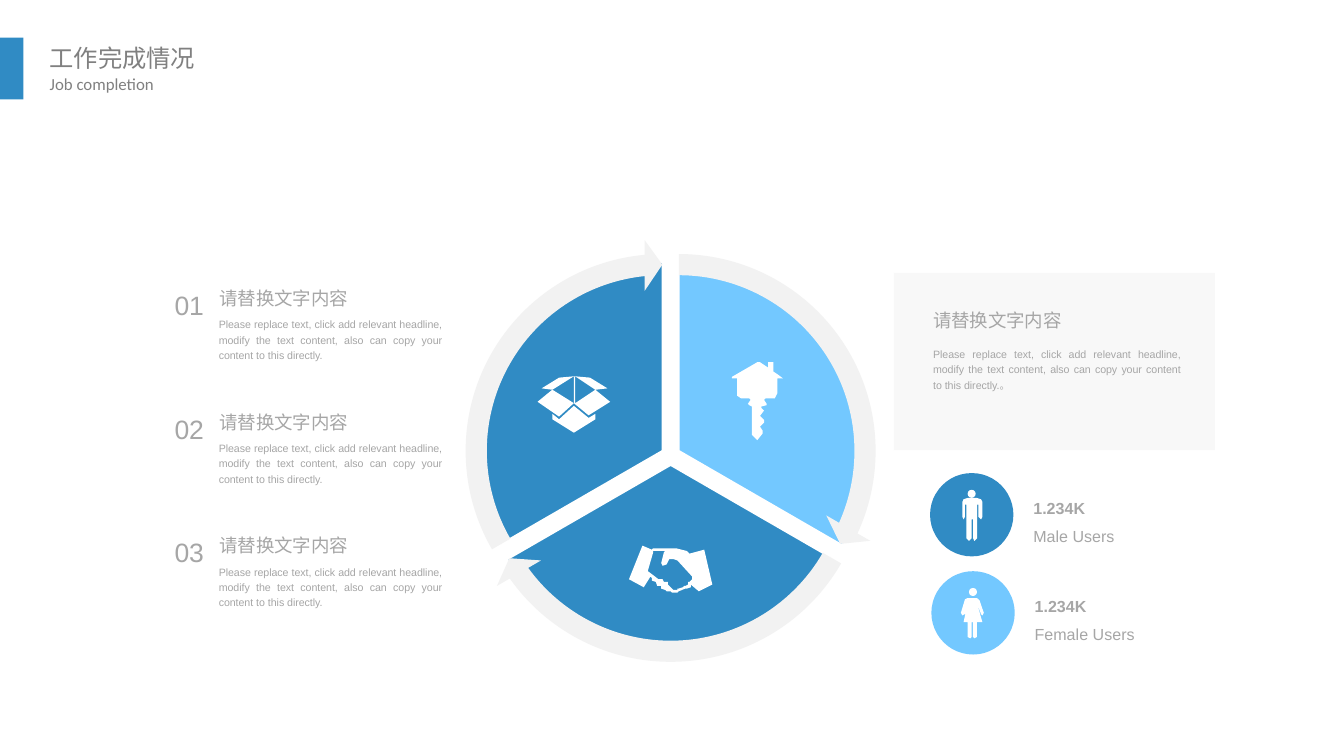
from math import cos, radians, sin
from typing import NamedTuple

from lxml.etree import SubElement
from pptx import Presentation
from pptx.dml.color import RGBColor
from pptx.enum.shapes import MSO_SHAPE
from pptx.enum.text import MSO_AUTO_SIZE, PP_ALIGN
from pptx.oxml.ns import qn
from pptx.util import Inches, Pt

BLUE = RGBColor(0x30, 0x8B, 0xC4)
SKY = RGBColor(0x73, 0xC8, 0xFF)
PALE = RGBColor(0xF2, 0xF2, 0xF2)
WHITE = RGBColor(0xFF, 0xFF, 0xFF)
DARK_GREY = RGBColor(0x80, 0x80, 0x80)
GREY = RGBColor(0xA6, 0xA6, 0xA6)

CELL = Inches(0.1)
ICON_STEP = CELL / 10
CJK_FONT = "Noto Sans CJK SC"
HEADING = "请替换文字内容"
BODY = ("Please replace text, click add relevant headline, modify the text content, "
        "also can copy your content to this directly.")

HANDSHAKE = [
    [(56, 3), (45, 6), (46, 7), (43, 4), (35, 2), (31, 2), (18, 2), (17, 3), (10, 0),
     (0, 25), (11, 31), (16, 23), (17, 24), (17, 26), (20, 27), (21, 30), (24, 30), (24, 32),
     (27, 33), (28, 34), (31, 34), (32, 35), (36, 35), (37, 34), (42, 32), (43, 32), (46, 31),
     (46, 29), (52, 34), (62, 29)],
    [(45, 27), (44, 27), (44, 29), (42, 30), (41, 30), (40, 31), (37, 32), (36, 32),
     (36, 33), (33, 33), (31, 31), (29, 29), (29, 27), (26, 27), (25, 25), (22, 25), (18, 22),
     (14, 19), (18, 5), (18, 4), (27, 4), (26, 5), (24, 13), (25, 15), (28, 14), (30, 10),
     (33, 10), (36, 11), (47, 23), (47, 25)],
]
CARTON_LID = [[(27, 20), (38, 29), (54, 19), (43, 10), (28, 20), (28, 0), (43, 10), (52, 9),
               (39, 1), (28, 0), (27, 0), (16, 1), (3, 9), (11, 10), (27, 0)]]
CARTON_FLAP = [[(0, 19), (16, 30), (27, 20), (11, 10)]]
CARTON_BASE = [[(27, 22), (16, 32), (11, 28), (11, 32), (27, 42), (43, 32), (43, 28), (38, 31)]]
HOUSE_KEY = [[(5, 23), (5, 13), (1, 13), (1, 12), (20, 1), (22, 1), (28, 5), (28, 1), (32, 1),
              (32, 8), (35, 10), (39, 13), (35, 13), (35, 24), (33, 28), (26, 28), (25, 29),
              (27, 32), (27, 33), (23, 34), (23, 35), (25, 37), (22, 41), (25, 44), (25, 46),
              (22, 49), (24, 52), (24, 54), (20, 59), (16, 55), (16, 34), (14, 33), (13, 32),
              (15, 29), (14, 28), (8, 28), (5, 26)]]
MAN = [[(11, 0), (4, 0), (1, 1), (0, 3), (0, 14), (1, 16), (2, 14), (2, 5), (3, 5), (3, 30),
        (5, 32), (7, 30), (7, 16), (8, 16), (8, 30), (9, 32), (11, 30), (11, 5), (12, 5),
        (12, 14), (14, 16), (15, 14), (15, 3), (14, 1)]]
WOMAN = [[(17, 11), (14, 2), (12, 0), (5, 0), (3, 1), (0, 11), (1, 13), (3, 12), (5, 4),
          (2, 18), (5, 18), (5, 29), (7, 30), (8, 29), (8, 18), (9, 18), (9, 29), (10, 30),
          (12, 29), (12, 18), (16, 18), (12, 4), (15, 12), (16, 13)]]


class Box(NamedTuple):
    """An area of the slide in grid cells."""
    left: float
    top: float
    width: float
    height: float

    def inside(self, left, top, width, height):
        """Return a box placed relative to this one."""
        return Box(self.left + left, self.top + top, width, height)

    def lengths(self):
        """Return the four lengths in slide units."""
        return [int(value * CELL) for value in self]


def paint(shape, colour, line=None):
    """Give a shape a flat fill and an optional outline."""
    shape.shadow.inherit = False
    shape.fill.solid()
    shape.fill.fore_color.rgb = colour
    if line is None:
        shape.line.fill.background()
    else:
        shape.line.color.rgb = line
        shape.line.width = Pt(1)


def add_preset(slide, kind, box, colour, line=None):
    """Add a painted preset shape."""
    shape = slide.shapes.add_shape(kind, *box.lengths())
    paint(shape, colour, line)
    return shape


def add_icon(slide, box, contours):
    """Add a white outline whose points are hundredths of an inch inside the box."""
    first, *others = contours
    builder = slide.shapes.build_freeform(*first[0], scale=ICON_STEP)
    builder.add_line_segments(first[1:], close=True)
    for contour in others:
        builder.move_to(*contour[0])
        builder.add_line_segments(contour[1:], close=True)
    left, top, _, _ = box.lengths()
    paint(builder.convert_to_shape(left, top), WHITE)


def add_text(slide, box, text, size, colour=GREY, font="Arial", bold=False,
             align=PP_ALIGN.LEFT, wrap=False, spacing=1.2, insets=(0.1, 0.05)):
    """Add a one-paragraph text box."""
    frame = slide.shapes.add_textbox(*box.lengths()).text_frame
    frame.text = text
    frame.word_wrap = wrap
    frame.auto_size = MSO_AUTO_SIZE.SHAPE_TO_FIT_TEXT
    frame.margin_left = frame.margin_right = Inches(insets[0])
    frame.margin_top = frame.margin_bottom = Inches(insets[1])
    paragraph = frame.paragraphs[0]
    paragraph.alignment = align
    paragraph.line_spacing = spacing
    run = paragraph.runs[0]
    run.font.size = Pt(size)
    run.font.bold = bold
    run.font.name = font
    run.font.color.rgb = colour
    SubElement(run._r.get_or_add_rPr(), qn("a:ea"), typeface=CJK_FONT)


def add_title(slide, box):
    """Draw the accent bar and the two title lines."""
    add_preset(slide, MSO_SHAPE.RECTANGLE, box.inside(0, 0, 1.75, 4.6), BLUE)
    style = {"colour": DARK_GREY, "spacing": 1.0, "insets": (0.08, 0.04)}
    add_text(slide, box.inside(2.9, 0, 12.5, 2.9), "工作完成情况", 13, font=CJK_FONT, **style)
    add_text(slide, box.inside(2.9, 2.3, 9.4, 2.3), "Job completion", 9, font="Calibri", **style)


def add_item(slide, box, number):
    """Draw a numbered heading with its description."""
    add_text(slide, box.inside(0, 0, 4.2, 3.9), number, 14.2, align=PP_ALIGN.JUSTIFY)
    add_text(slide, box.inside(3.35, 0, 12.2, 3), HEADING, 9.9)
    add_text(slide, box.inside(3.3, 2.45, 18.6, 4.5), BODY, 5.7,
             align=PP_ALIGN.JUSTIFY, wrap=True)


def add_wheel(slide, box):
    """Draw three sectors pushed out from the centre, each with an arrow and an icon."""
    sector_size, arrow_size, gap = 28.1, 31.5, 0.7
    centre_left, centre_top = box.width / 2, box.height / 2
    parts = (
        (MSO_SHAPE.PIE, sector_size, WHITE, lambda turn: (270 + turn, 30 + turn)),
        (MSO_SHAPE.CIRCULAR_ARROW, arrow_size, None, lambda turn: (24.5 + turn, 270 + turn)),
    )
    for kind, size, line, angles in parts:
        for index, colour in enumerate((SKY, BLUE, BLUE)):
            turn = 120 * index
            direction = radians(turn - 30)
            left = centre_left + gap * cos(direction) - size / 2
            top = centre_top + gap * sin(direction) - size / 2
            shape = add_preset(slide, kind, box.inside(left, top, size, size),
                               colour if line else PALE, line)
            first, second = (angle % 360 * 0.6 for angle in angles(turn))
            values = (first, second) if line else (0.05, 3.28, first, second, 0.06)
            for position, value in enumerate(values):
                shape.adjustments[position] = value
    add_icon(slide, box.inside(12.9, 22.7, 6.1, 3.6), HANDSHAKE)
    for contours in (CARTON_LID, CARTON_FLAP, CARTON_BASE):
        add_icon(slide, box.inside(6.1, 10.1, 5.4, 4.2), contours)
    add_icon(slide, box.inside(20.45, 8.95, 4, 5.9), HOUSE_KEY)


def add_panel(slide, box):
    """Draw the translucent panel with its heading and description."""
    panel = add_preset(slide, MSO_SHAPE.RECTANGLE, box, PALE)
    colour = panel._element.spPr.find(qn("a:solidFill"))[0]
    SubElement(colour, qn("a:alpha"), val="50000")
    add_text(slide, box.inside(1.95, 1.9, 12.2, 3), HEADING, 9.9)
    add_text(slide, box.inside(1.95, 4.9, 20.4, 4.5), BODY + "。", 5.7,
             align=PP_ALIGN.JUSTIFY, wrap=True)


def add_users(slide, box, colour, body, body_left, body_top, label):
    """Draw a user badge with its figure and label."""
    add_preset(slide, MSO_SHAPE.OVAL, box.inside(0, 0, 6.2, 6.2), colour)
    add_preset(slide, MSO_SHAPE.OVAL, box.inside(2.8, 1.25, 0.6, 0.6), WHITE)
    add_icon(slide, box.inside(body_left, body_top, 1.7, 3.2), body)
    add_text(slide, box.inside(6.7, 1.1, 5.9, 2.7), "1.234K", 8.6, bold=True)
    add_text(slide, box.inside(6.7, 3.2, 9.6, 2.7), label, 8.6)


def main():
    """Build the slide and save it."""
    presentation = Presentation()
    presentation.slide_width = Inches(10)
    presentation.slide_height = presentation.slide_width * 9 // 16
    slide = presentation.slides.add_slide(presentation.slide_layouts[6])
    add_title(slide, Box(0, 2.8, 15.4, 4.6))
    for index in range(3):
        add_item(slide, Box(12, 20.55 + 9.2 * index, 21.9, 7), f"{index + 1:02}")
    add_wheel(slide, Box(33.9, 17.9, 32, 32))
    add_panel(slide, Box(66.5, 20.3, 23.9, 13.2))
    add_users(slide, Box(69.2, 35.2, 16.3, 6.2), BLUE, MAN, 2.4, 1.85, "Male Users")
    add_users(slide, Box(69.3, 42.5, 16.3, 6.2), SKY, WOMAN, 2.2, 2, "Female Users")
    presentation.save("out.pptx")


if __name__ == "__main__":
    main()
